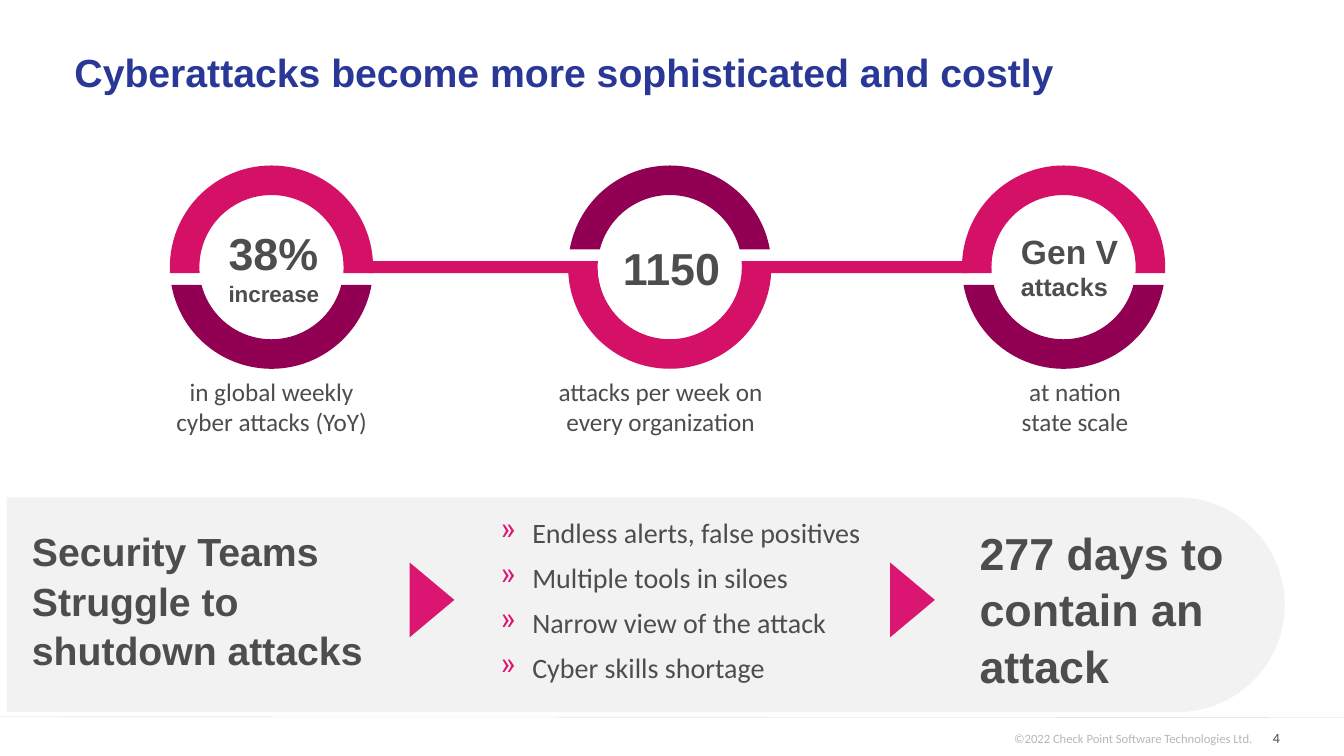
from dataclasses import dataclass
from math import asin, cos, degrees, pi, sin

from lxml.etree import SubElement
from pptx import Presentation
from pptx.dml.color import RGBColor
from pptx.enum.shapes import MSO_CONNECTOR, MSO_SHAPE
from pptx.enum.text import MSO_ANCHOR, MSO_AUTO_SIZE, PP_ALIGN
from pptx.oxml.ns import qn
from pptx.util import Pt


@dataclass(frozen=True)
class Theme:
    navy: str = "293896"
    pink: str = "D51067"
    accent: str = "DA1572"
    plum: str = "920053"
    ink: str = "4D4D4F"
    muted: str = "B7B7B9"
    rule: str = "D9D9D9"
    panel: str = "F2F2F2"
    heading: str = "Arial"
    body: str = "Calibri"
    stat: int = 32
    title: int = 28
    stat_small: int = 24
    bullet: int = 20
    caption: int = 18
    unit: int = 16
    page: int = 10
    legal: int = 9


def apply(target, values):
    for name, value in values.items():
        setattr(target, name, value)


class Canvas:
    def __init__(self, slide, theme):
        self.slide = slide
        self.theme = theme

    def font(self, paragraph, size, color=None, bold=False):
        face = self.theme.heading if bold else self.theme.body
        apply(paragraph.font, {"size": Pt(size), "bold": bold, "name": face})
        paragraph.font.color.rgb = RGBColor.from_string(color or self.theme.ink)

    def frame(self, holder, anchor, inset=(7.2, 3.6)):
        across, down = map(Pt, inset)
        apply(holder.text_frame, {
            "word_wrap": True, "auto_size": MSO_AUTO_SIZE.NONE,
            "vertical_anchor": anchor,
            "margin_left": across, "margin_right": across,
            "margin_top": down, "margin_bottom": down,
        })
        return holder.text_frame

    def title(self, box, wording):
        heading = self.slide.shapes.title
        apply(heading, dict(zip(("left", "top", "width", "height"), map(Pt, box))))
        paragraph = self.frame(heading, MSO_ANCHOR.TOP).paragraphs[0]
        paragraph.text = wording
        apply(paragraph, {"alignment": PP_ALIGN.LEFT, "line_spacing": 0.85})
        self.font(paragraph, self.theme.title, self.theme.navy, True)

    def text(self, box, lines, color=None, bold=False, anchor=MSO_ANCHOR.TOP,
             inset=(7.2, 3.6), bullet=None, **layout):
        holder = self.slide.shapes.add_textbox(*map(Pt, box))
        frame = self.frame(holder, anchor, inset)
        for index, (wording, size) in enumerate(lines):
            paragraph = frame.add_paragraph() if index else frame.paragraphs[0]
            paragraph.text = wording
            apply(paragraph, layout)
            if bullet:
                self.bullet(paragraph, bullet)
            self.font(paragraph, size, color, bold)

    def bullet(self, paragraph, mark):
        properties = paragraph._p.get_or_add_pPr()
        properties.set("marL", str(Pt(22.5)))
        properties.set("indent", str(-Pt(22.5)))
        tint = SubElement(properties, qn("a:buClr"))
        SubElement(tint, qn("a:srgbClr"), val=self.theme.accent)
        SubElement(properties, qn("a:buChar"), char=mark)

    def paint(self, shape, color):
        shape.shadow.inherit = False
        shape.fill.solid()
        shape.fill.fore_color.rgb = RGBColor.from_string(color)
        shape.line.fill.background()

    def shape(self, kind, box, color, rotation=0, adjustments=()):
        shape = self.slide.shapes.add_shape(kind, *map(Pt, box))
        shape.rotation = rotation
        for index, value in enumerate(adjustments):
            shape.adjustments[index] = value
        self.paint(shape, color)

    def arc(self, center, side, edge, color, outer=72.6, inner=51.5):
        x, y = center
        outer_start, inner_start = asin(edge / outer), asin(edge / inner)
        stops = [(outer, outer_start), (outer, pi / 2), (outer, pi - outer_start),
                 (inner, pi - inner_start), (inner, pi / 2), (inner, inner_start)]
        points = [(Pt(x + radius * cos(angle)), Pt(y + side * radius * sin(angle)))
                  for radius, angle in stops]
        outline = self.slide.shapes.build_freeform(*points[0])
        outline.add_line_segments(points[1:])
        half = outline.convert_to_shape()
        segments = list(half._element.iter(qn("a:lnTo")))
        for segment, (radius, start), (end_radius, end) in zip(segments, stops, stops[1:]):
            if radius == end_radius:
                curve = SubElement(segment.getparent(), qn("a:arcTo"), {
                    "wR": str(Pt(radius)), "hR": str(Pt(radius)),
                    "stAng": str(round(degrees(side * start) % 360 * 60000)),
                    "swAng": str(round(degrees(side * (end - start)) * 60000)),
                })
                segment.getparent().replace(segment, curve)
        self.paint(half, color)

    def rule(self, start, end, color, width):
        line = self.slide.shapes.add_connector(
            MSO_CONNECTOR.STRAIGHT, *map(Pt, start + end))
        line.line.width = Pt(width)
        line.line.color.rgb = RGBColor.from_string(color)
        SubElement(line._element.spPr, qn("a:effectLst"))


def main():
    theme = Theme()
    deck = Presentation()
    apply(deck, {"slide_width": Pt(960), "slide_height": Pt(540)})
    canvas = Canvas(deck.slides.add_slide(deck.slide_layouts[5]), theme)

    canvas.title((46, 36, 900, 72), "Cyberattacks become more sophisticated and costly")

    ring_y = 190.8
    stats = [
        (193.9, -1, (156.2, 156.2, 102, 68),
         [("38%", theme.stat), ("increase", theme.unit)],
         108.7, ["in global weekly", "cyber attacks (YoY)"]),
        (478.4, 1, (437.8, 157, 102, 68),
         [("1150", theme.stat)],
         386.6, ["attacks per week on", "every organization"]),
        (759.7, -1, (722.2, 161.3, 102, 58),
         [("Gen V", theme.stat_small), ("attacks", theme.caption)],
         682.6, ["at nation", "state scale"]),
    ]
    for ring_x, side, figure_box, figure, caption_x, caption in stats:
        canvas.arc((ring_x, ring_y), side, -4.3, theme.pink)
        canvas.arc((ring_x, ring_y), -side, 12.6, theme.plum)
        canvas.text(figure_box, figure, bold=True, anchor=MSO_ANCHOR.MIDDLE)
        canvas.text((caption_x, 265, 170.6, 51),
                    [(line, theme.caption) for line in caption],
                    alignment=PP_ALIGN.CENTER)
    for link_x in (263.5, 548):
        canvas.shape(MSO_SHAPE.RECTANGLE, (link_x, 186.5, 144, 8.6), theme.pink)

    canvas.shape(MSO_SHAPE.ROUND_2_SAME_RECTANGLE, (384.5, -24.5, 153.4, 913),
                 theme.panel, 90, (0.5, 0))
    canvas.text((15.8, 371.5, 275.8, 120),
                [("Security Teams Struggle to shutdown attacks", theme.title)],
                bold=True, line_spacing=1.05)
    problems = ["Endless alerts, false positives", "Multiple tools in siloes",
                "Narrow view of the attack", "Cyber skills shortage"]
    canvas.text((350.6, 364.3, 284.4, 132),
                [(problem, theme.bullet) for problem in problems],
                bullet="»", space_after=Pt(8.2))
    canvas.text((692.6, 370, 205.2, 124),
                [("277 days to contain an attack", theme.stat)],
                bold=True, line_spacing=1.05)
    for arrow_x in (281.8, 625):
        canvas.shape(MSO_SHAPE.ISOSCELES_TRIANGLE, (arrow_x, 412.5, 53.5, 32),
                     theme.accent, 90)

    canvas.rule((0, 512), (960, 512.5), theme.rule, 0.25)
    footer = {"anchor": MSO_ANCHOR.MIDDLE, "inset": (9.4, 5)}
    canvas.text((715, 515.5, 216, 24),
                [("©2022 Check Point Software Technologies Ltd.", theme.legal)],
                color=theme.muted, **footer)
    canvas.text((779, 516.2, 144.7, 21.6), [("4", theme.page)],
                alignment=PP_ALIGN.RIGHT, **footer)

    deck.save("out.pptx")


if __name__ == "__main__":
    main()
